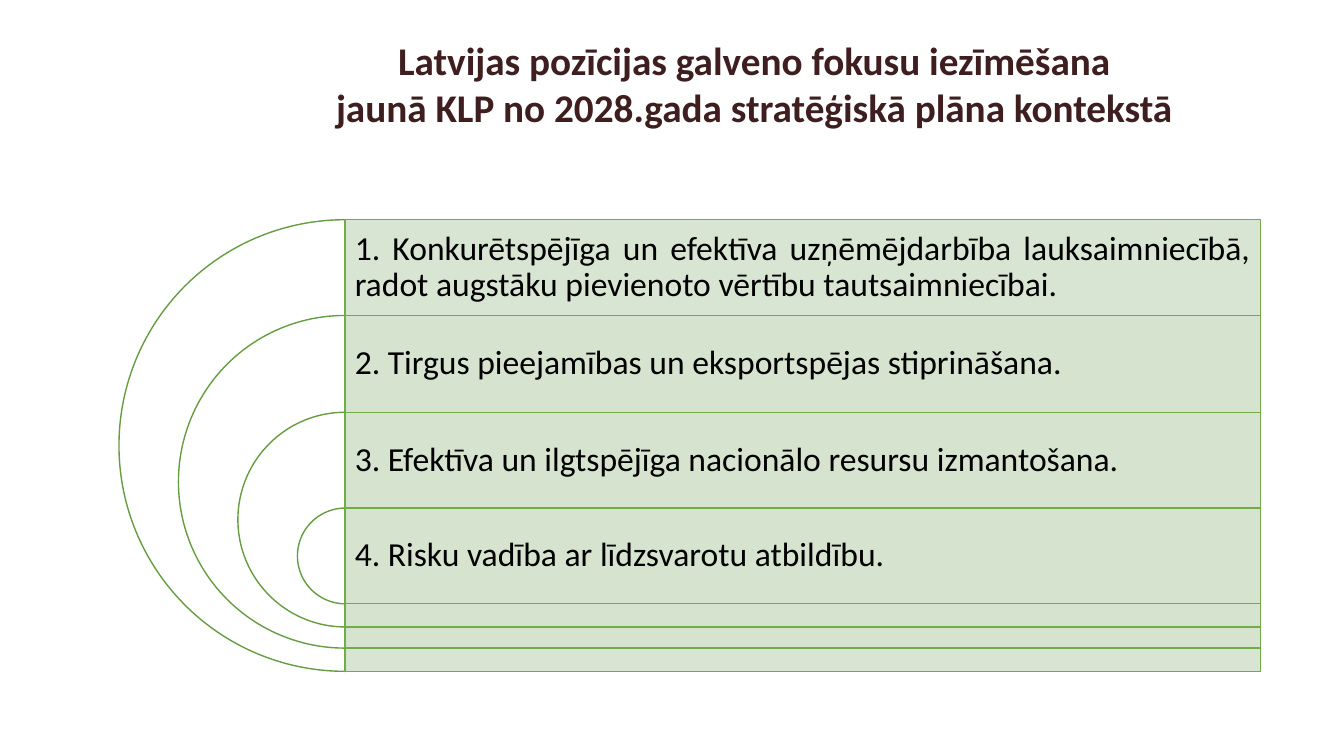
from lxml import etree
from pptx import Presentation
from pptx import util as u
from pptx.dml.color import RGBColor
from pptx.enum import shapes, text
from pptx.oxml.ns import qn

PX = 9144  # EMU; 100 px to the inch
COLOURS = {"title": "3E1E1F", "body": "000000", "arc": "669D40",
           "edge": "70AD47", "band": "D5E3CF", "white": "FFFFFF"}
TITLE = ["Latvijas pozīcijas galveno fokusu iezīmēšana",
         "jaunā KLP no 2028.gada stratēģiskā plāna kontekstā"]
PRIORITIES = [
    "1. Konkurētspējīga un efektīva uzņēmējdarbība lauksaimniecībā, "
    "radot augstāku pievienoto vērtību tautsaimniecībai.",
    "2. Tirgus pieejamības un eksportspējas stiprināšana.",
    "3. Efektīva un ilgtspējīga nacionālo resursu izmantošana.",
    "4. Risku vadība ar līdzsvarotu atbildību.",
]
AXIS, TOP, BAND_WIDTH = 342, 218, 908
OUTER, INNER = 448, 95
LAST_OFFSET = 286

deck = Presentation()
deck.slide_width, deck.slide_height = 1333 * PX, 750 * PX
page = deck.slides.add_slide(deck.slide_layouts[6])


def add_outlined(kind, bounds, fill, line):
    shape = page.shapes.add_shape(kind, *(value * PX for value in bounds))
    shape.shadow.inherit = False
    shape.fill.solid()
    shape.fill.fore_color.rgb = RGBColor.from_string(COLOURS[fill])
    shape.line.color.rgb = RGBColor.from_string(COLOURS[line])
    shape.line.width = u.Pt(1)
    return shape


def add_text(bounds, lines, frame_format, para_format, font_format, colour):
    box = page.shapes.add_textbox(*(value * PX for value in bounds))
    frame = box.text_frame
    for name, value in frame_format.items():
        setattr(frame, name, value)
    for index, line in enumerate(lines):
        para = frame.add_paragraph() if index else frame.paragraphs[0]
        for name, value in para_format.items():
            setattr(para, name, value)
        span = para.add_run()
        span.text = line
        for name, value in font_format.items():
            setattr(span.font, name, value)
        span.font.color.rgb = RGBColor.from_string(COLOURS[colour])


add_text((298, 31, 900, 104), TITLE,
         {"word_wrap": True, "auto_size": text.MSO_AUTO_SIZE.SHAPE_TO_FIT_TEXT},
         {"alignment": text.PP_ALIGN.CENTER},
         {"name": "Calibri", "size": u.Pt(28), "bold": True}, "title")

band_frame = {"word_wrap": True, "vertical_anchor": text.MSO_ANCHOR.MIDDLE}
for side in ("left", "top", "right", "bottom"):
    band_frame[f"margin_{side}"] = 10 * PX

# Each nested half-circle spans the full height of its band
steps = len(PRIORITIES) - 1
for index, priority in enumerate(PRIORITIES):
    size = OUTER - round((OUTER - INNER) * index / steps)
    top = TOP + round(LAST_OFFSET * index / steps)

    arc = add_outlined(shapes.MSO_SHAPE.PIE, (AXIS - size // 2, top, size, size),
                       "white", "arc")
    arc.adjustments[0], arc.adjustments[1] = 54, 162

    band = add_outlined(shapes.MSO_SHAPE.RECTANGLE, (AXIS, top, BAND_WIDTH, size),
                        "band", "edge")
    band_colour = band.fill._xPr.find(qn("a:solidFill"))[0]
    etree.SubElement(band_colour, qn("a:alpha"), val="90000")

    add_text((AXIS, top, BAND_WIDTH, INNER), [priority], band_frame,
             {"alignment": text.PP_ALIGN.JUSTIFY, "line_spacing": 0.9},
             {"name": "Calibri", "size": u.Pt(24)}, "body")

deck.save("out.pptx")
